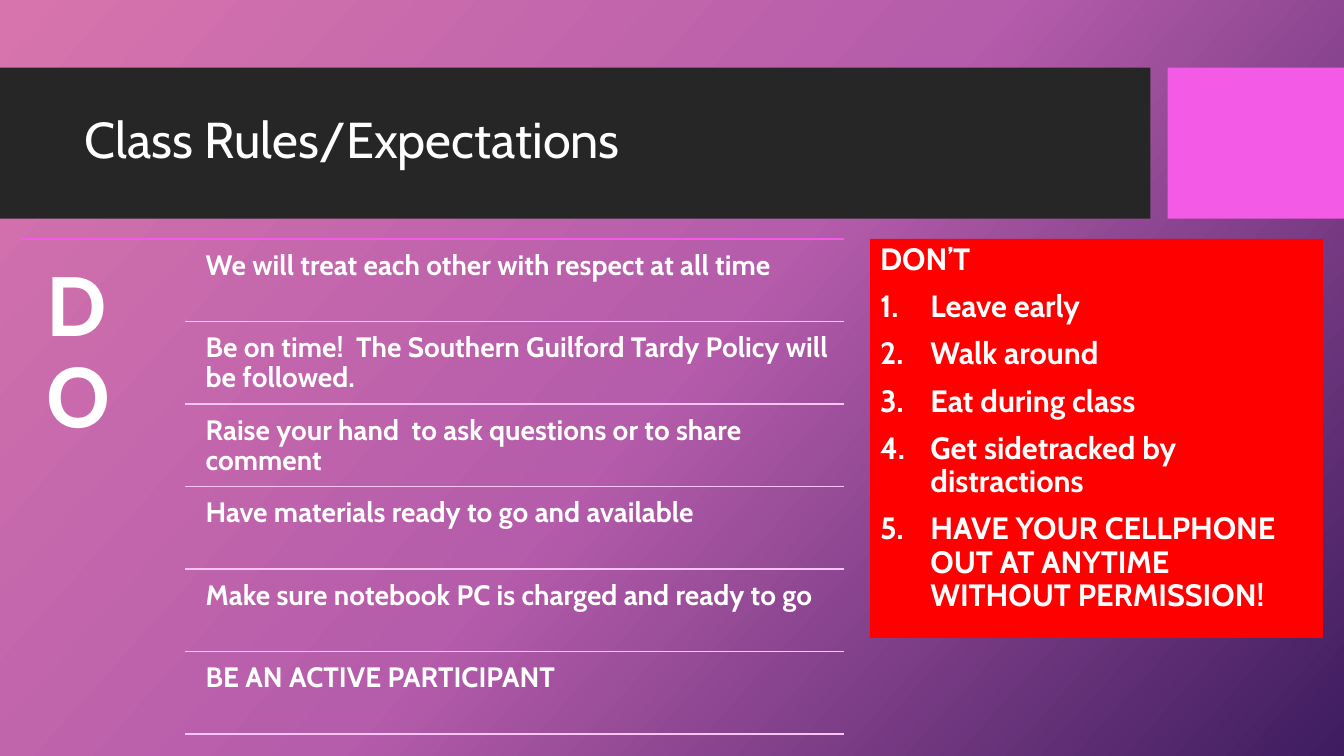
from copy import deepcopy

from pptx import Presentation
from pptx.dml.color import RGBColor
from pptx.enum.shapes import MSO_CONNECTOR, MSO_SHAPE
from pptx.enum.text import MSO_ANCHOR, PP_ALIGN
from pptx.oxml.ns import qn
from pptx.util import Inches, Pt

FONT = "Cabin"
WHITE, CHARCOAL, RED = "FFFFFF", "262626", "FF0000"
PINK, PALE_PINK = "F35AE6", "F9C4F3"
BACKGROUND_STOPS = [(0, "D774AD"), (0.5, "B55CAB"), (1, "3E1C5F")]

DO_RULES = [
    "We will treat each other with respect at all time",
    "Be on time!  The Southern Guilford Tardy Policy will be followed.",
    "Raise your hand  to ask questions or to share comment",
    "Have materials ready to go and available",
    "Make sure notebook PC is charged and ready to go",
    "BE AN ACTIVE PARTICIPANT",
]
DONT_RULES = [
    "Leave early",
    "Walk around",
    "Eat during class",
    "Get sidetracked by distractions",
    "HAVE YOUR CELLPHONE OUT AT ANYTIME WITHOUT PERMISSION!",
]

LIST_LEFT, LIST_RIGHT = 0.21, 8.37
LIST_TOP, LIST_BOTTOM = 2.37, 7.28
RULE_LEFT = 1.84
ROW_HEIGHT = (LIST_BOTTOM - LIST_TOP) / len(DO_RULES)


def color(hex_code):
    return RGBColor.from_string(hex_code)


def set_background(slide):
    fill = slide.background.fill
    fill.gradient()
    fill.gradient_angle = 360 - 42
    stop_list = slide.element.find(".//" + qn("a:gsLst"))
    stop_list.append(deepcopy(stop_list[-1]))
    for stop, (position, hex_code) in zip(fill.gradient_stops, BACKGROUND_STOPS):
        stop.position = position
        stop.color.rgb = color(hex_code)


def add_rectangle(slide, left, top, width, height, fill):
    shape = slide.shapes.add_shape(
        MSO_SHAPE.RECTANGLE, Inches(left), Inches(top), Inches(width), Inches(height)
    )
    shape.shadow.inherit = False
    shape.fill.solid()
    shape.fill.fore_color.rgb = color(fill)
    shape.line.fill.background()
    return shape


def add_line(slide, left, top, hex_code):
    """Draw a horizontal rule from left to the right edge of the DO list."""
    connector = slide.shapes.add_connector(
        MSO_CONNECTOR.STRAIGHT, Inches(left), Inches(top), Inches(LIST_RIGHT), Inches(top)
    )
    connector.line.color.rgb = color(hex_code)
    connector.line.width = Pt(1)
    properties = connector.element.spPr
    properties.append(properties.makeelement(qn("a:effectLst"), {}))


def format_paragraph(paragraph, text, size, bold=True):
    paragraph.text = text
    paragraph.alignment = PP_ALIGN.LEFT
    paragraph.line_spacing = 0.9
    font_format = {"name": FONT, "size": Pt(size), "bold": bold}
    for name, value in font_format.items():
        setattr(paragraph.font, name, value)
    paragraph.font.color.rgb = color(WHITE)


def add_text(slide, left, top, width, height, text, size,
             bold=True, inset=0.08, anchor=MSO_ANCHOR.TOP):
    box = slide.shapes.add_textbox(
        Inches(left), Inches(top), Inches(width), Inches(height)
    )
    frame_format = {"word_wrap": True, "vertical_anchor": anchor}
    for side in ("left", "top", "right", "bottom"):
        frame_format[f"margin_{side}"] = Inches(inset)
    for name, value in frame_format.items():
        setattr(box.text_frame, name, value)
    format_paragraph(box.text_frame.paragraphs[0], text, size, bold)


def number_paragraph(paragraph):
    properties = paragraph._p.get_or_add_pPr()
    indent = Inches(0.5)
    properties.set("marL", str(indent))
    properties.set("indent", str(-indent))
    for tag, attributes in (
        ("a:buFont", {"typeface": "+mj-lt"}),
        ("a:buAutoNum", {"type": "arabicPeriod"}),
    ):
        properties.append(properties.makeelement(qn(tag), attributes))


def add_header(slide):
    add_rectangle(slide, 0, 0.67, 11.41, 1.5, CHARCOAL)
    add_rectangle(slide, 11.58, 0.67, 1.75, 1.5, PINK)
    add_text(slide, 0.74, 0.82, 10.51, 1.18, "Class Rules/Expectations", 36,
             bold=False, inset=0.1, anchor=MSO_ANCHOR.MIDDLE)


def add_do_list(slide):
    add_line(slide, LIST_LEFT, LIST_TOP, PINK)
    add_text(slide, LIST_LEFT, LIST_TOP, RULE_LEFT - LIST_LEFT,
             LIST_BOTTOM - LIST_TOP, "DO", 60, inset=0.25)
    for row, rule in enumerate(DO_RULES):
        top = LIST_TOP + row * ROW_HEIGHT
        add_text(slide, 1.96, top + 0.04, 6.4, 0.78, rule, 20)
        add_line(slide, RULE_LEFT, top + ROW_HEIGHT, PALE_PINK)


def add_dont_panel(slide):
    frame = add_rectangle(slide, 8.63, LIST_TOP, 4.49, 3.96, RED).text_frame
    frame.word_wrap = True
    frame.vertical_anchor = MSO_ANCHOR.TOP
    format_paragraph(frame.paragraphs[0], "DON’T", 22)
    for rule in DONT_RULES:
        paragraph = frame.add_paragraph()
        paragraph.space_before = Pt(10)
        number_paragraph(paragraph)
        format_paragraph(paragraph, rule, 22)


def main():
    presentation = Presentation()
    presentation.slide_width = Inches(13.33)
    presentation.slide_height = Inches(7.5)
    slide = presentation.slides.add_slide(presentation.slide_layouts[6])
    set_background(slide)
    add_header(slide)
    add_do_list(slide)
    add_dont_panel(slide)
    presentation.save("out.pptx")


if __name__ == "__main__":
    main()
